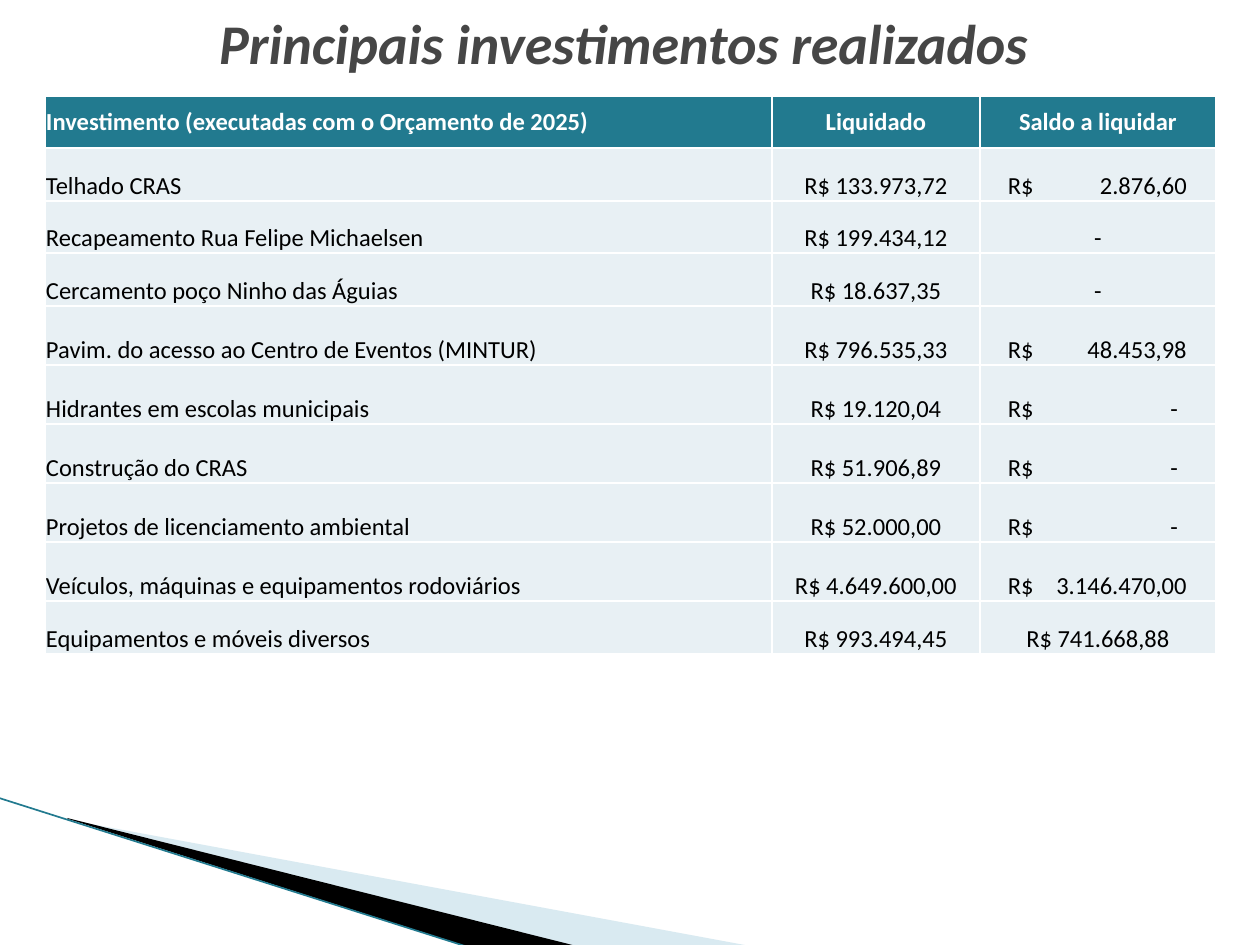
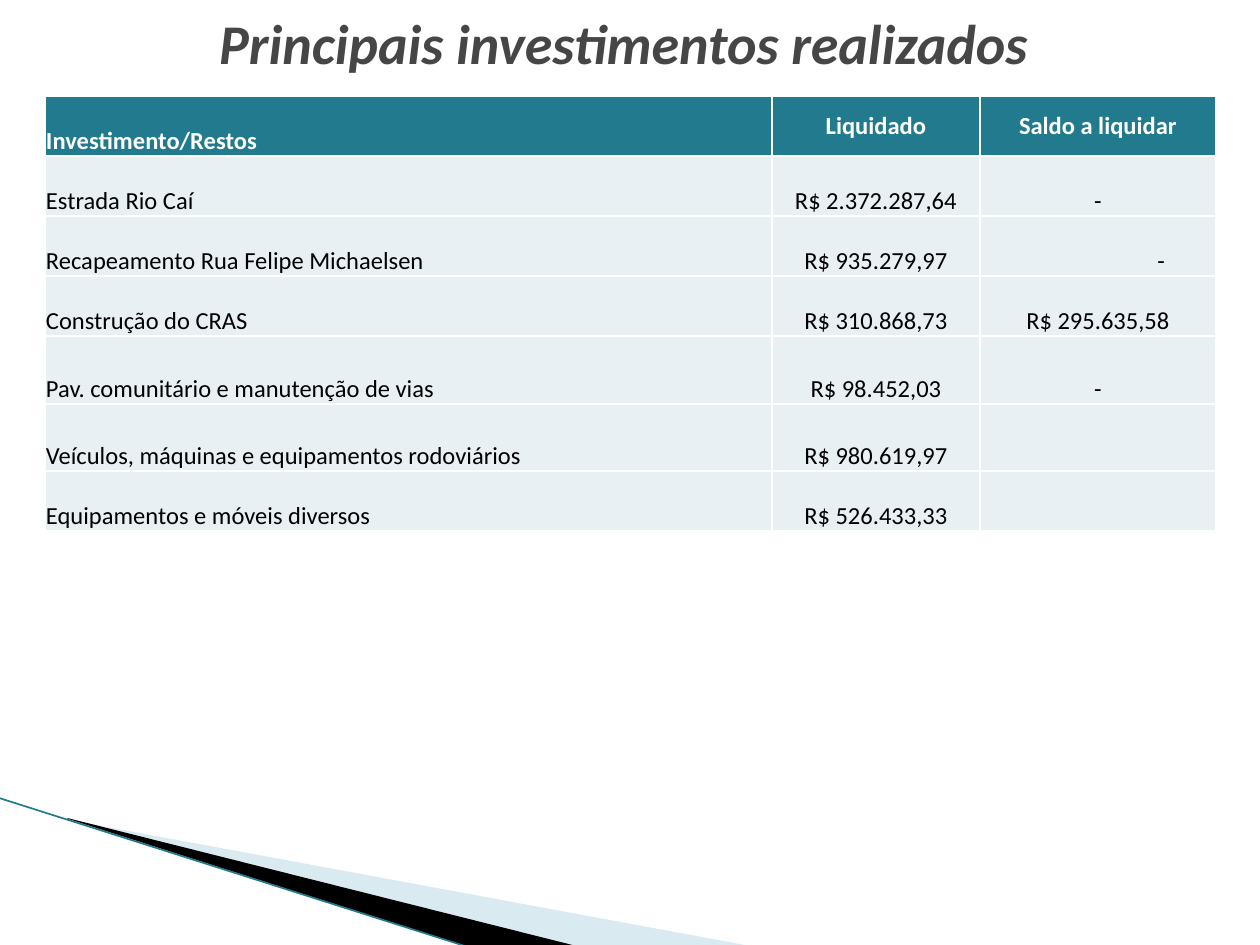
import pptx
import pptx.dml.color
import pptx.enum.shapes
import pptx.enum.text
import pptx.oxml
import pptx.oxml.ns
import pptx.util
from lxml import etree

RGBColor = pptx.dml.color.RGBColor
Align = pptx.enum.text.PP_ALIGN
Anchor = pptx.enum.text.MSO_ANCHOR

WHITE = RGBColor(0xFF, 0xFF, 0xFF)
BLACK = RGBColor(0x00, 0x00, 0x00)
TEAL = RGBColor(0x22, 0x7A, 0x8F)
PALE_TEAL = RGBColor(0xE8, 0xF0, 0xF4)
LIGHT_BLUE = RGBColor(0xA0, 0xCB, 0xDC)
TITLE_GREY = RGBColor(0x46, 0x46, 0x46)

FONT = "Calibri"
PX = 914400 / 126
PAGE_SIZE = (1260, 945)
TITLE = "Principais investimentos realizados"
TITLE_BOX = (0, 18, 1248, 48)
TABLE_ORIGIN = (45, 96)
COLUMN_WIDTHS = (727, 208, 236)
CURRENCY_INDENT = 28
VALUE_EDGE = 207
DASH_EDGE = 198
LONE_DASH_EDGE = 185

BUDGET_ROWS = [
    (52, "Investimento (executadas com o Orçamento de 2025)", "Liquidado", "Saldo a liquidar"),
    (53, "Telhado CRAS", "R$ 133.973,72", "R$\t2.876,60"),
    (52, "Recapeamento Rua Felipe Michaelsen", "R$ 199.434,12", "-"),
    (53, "Cercamento poço Ninho das Águias", "R$ 18.637,35", "-"),
    (59, "Pavim. do acesso ao Centro de Eventos (MINTUR)", "R$ 796.535,33", "R$\t48.453,98"),
    (59, "Hidrantes em escolas municipais", "R$ 19.120,04", "R$\t-"),
    (59, "Construção do CRAS", "R$ 51.906,89", "R$\t-"),
    (59, "Projetos de licenciamento ambiental", "R$ 52.000,00", "R$\t-"),
    (59, "Veículos, máquinas e equipamentos rodoviários", "R$ 4.649.600,00", "R$\t3.146.470,00"),
    (53, "Equipamentos e móveis diversos", "R$ 993.494,45", "R$ 741.668,88"),
]
CARRYOVER_ROWS = [
    (60, "Investimento/Restos", "Liquidado", "Saldo a liquidar"),
    (60, "Estrada Rio Caí", "R$ 2.372.287,64", "-"),
    (60, "Recapeamento Rua Felipe Michaelsen", "R$ 935.279,97", "\t-"),
    (60, "Construção do CRAS", "R$ 310.868,73", "R$ 295.635,58"),
    (68, "Pav. comunitário e manutenção de vias", "R$ 98.452,03", "-"),
    (67, "Veículos, máquinas e equipamentos rodoviários", "R$ 980.619,97", ""),
    (60, "Equipamentos e móveis diversos", "R$ 526.433,33", ""),
]


def px(length):
    return pptx.util.Emu(round(length * PX))


def style_text(para, size, color, bold=False, italic=False):
    for span in para.runs:
        span.font.name = FONT
        span.font.size = pptx.util.Pt(size)
        span.font.color.rgb = color
        span.font.bold = bold
        span.font.italic = italic


def add_wedge(page, points, color, opacity=100):
    builder = page.shapes.build_freeform(*points[0], scale=PX)
    builder.add_line_segments(points[1:], close=True)
    wedge = builder.convert_to_shape()
    wedge.shadow.inherit = False
    wedge.fill.solid()
    wedge.fill.fore_color.rgb = color
    wedge.line.fill.background()
    if opacity < 100:
        paint = wedge.fill._xPr.find(".//" + pptx.oxml.ns.qn("a:srgbClr"))
        etree.SubElement(paint, pptx.oxml.ns.qn("a:alpha"), val=str(opacity * 1000))


def add_corner_wedges(page):
    add_wedge(page, [(69, 820), (750, 946), (575, 946), (69, 819)], LIGHT_BLUE, 40)
    add_wedge(page, [(67, 818), (576, 946), (469, 947), (68, 819)], BLACK)
    edge = page.shapes.add_connector(
        pptx.enum.shapes.MSO_CONNECTOR.STRAIGHT, px(-1), px(798), px(468), px(947))
    edge.line.color.rgb = TEAL
    edge.line.width = pptx.util.Pt(0.95)
    etree.SubElement(edge._element.spPr, pptx.oxml.ns.qn("a:effectLst"))


def add_title(page, box):
    title = page.shapes.add_textbox(*map(px, box))
    frame = title.text_frame
    frame.word_wrap = True
    frame.margin_left = frame.margin_right = frame.margin_top = frame.margin_bottom = 0
    frame.vertical_anchor = Anchor.MIDDLE
    frame.text = TITLE
    para = frame.paragraphs[0]
    para.alignment = Align.CENTER
    style_text(para, 32, TITLE_GREY, bold=True, italic=True)


def add_cell_borders(cell):
    properties = cell._tc.get_or_add_tcPr()
    for side in ("lnL", "lnR", "lnT", "lnB"):
        properties.append(pptx.oxml.parse_xml(
            f'<a:{side} {pptx.oxml.ns.nsdecls("a")} w="12700"><a:solidFill>'
            f'<a:srgbClr val="{WHITE}"/></a:solidFill></a:{side}>'))


def align_amount(cell, para):
    """Put the currency sign at the left and the amount at a right tab stop."""
    sign, amount = para.text.split("\t")
    if not sign:
        edge = LONE_DASH_EDGE
    else:
        edge = DASH_EDGE if amount == "-" else VALUE_EDGE
    para.alignment = Align.LEFT
    cell.margin_left = px(CURRENCY_INDENT)
    properties = para._p.get_or_add_pPr()
    tabs = etree.SubElement(properties, pptx.oxml.ns.qn("a:tabLst"))
    etree.SubElement(tabs, pptx.oxml.ns.qn("a:tab"),
                     pos=str(px(edge - CURRENCY_INDENT)), algn="r")


def fill_cell(cell, text, is_header, is_label, anchor):
    add_cell_borders(cell)
    cell.fill.solid()
    cell.fill.fore_color.rgb = TEAL if is_header else PALE_TEAL
    cell.margin_left = cell.margin_right = cell.margin_top = px(1)
    cell.margin_bottom = 0
    cell.vertical_anchor = anchor
    if not text:
        return
    cell.text_frame.text = text
    para = cell.text_frame.paragraphs[0]
    para.alignment = Align.LEFT if is_label else Align.CENTER
    if "\t" in text:
        align_amount(cell, para)
    style_text(para, 14, WHITE if is_header else BLACK, bold=is_header)


def add_investment_table(page, origin, rows, header_label_anchor):
    size = (sum(COLUMN_WIDTHS), sum(row[0] for row in rows))
    frame = page.shapes.add_table(len(rows), len(COLUMN_WIDTHS), *map(px, origin + size))
    table = frame.table
    table.first_row = table.horz_banding = False
    for column, width in zip(table.columns, COLUMN_WIDTHS):
        column.width = px(width)
    for row_index, (height, *texts) in enumerate(rows):
        table.rows[row_index].height = px(height)
        is_header = row_index == 0
        for column_index, text in enumerate(texts):
            is_label = column_index == 0
            anchor = Anchor.BOTTOM
            if is_header:
                anchor = header_label_anchor if is_label else Anchor.MIDDLE
            fill_cell(table.cell(row_index, column_index), text, is_header, is_label, anchor)


def add_investment_page(deck, rows, header_label_anchor):
    page = deck.slides.add_slide(deck.slide_layouts[6])
    add_corner_wedges(page)
    add_title(page, TITLE_BOX)
    add_investment_table(page, TABLE_ORIGIN, rows, header_label_anchor)


def main():
    deck = pptx.Presentation()
    deck.slide_width, deck.slide_height = map(px, PAGE_SIZE)
    add_investment_page(deck, BUDGET_ROWS, Anchor.MIDDLE)
    add_investment_page(deck, CARRYOVER_ROWS, Anchor.BOTTOM)
    deck.save("out.pptx")


if __name__ == "__main__":
    main()
